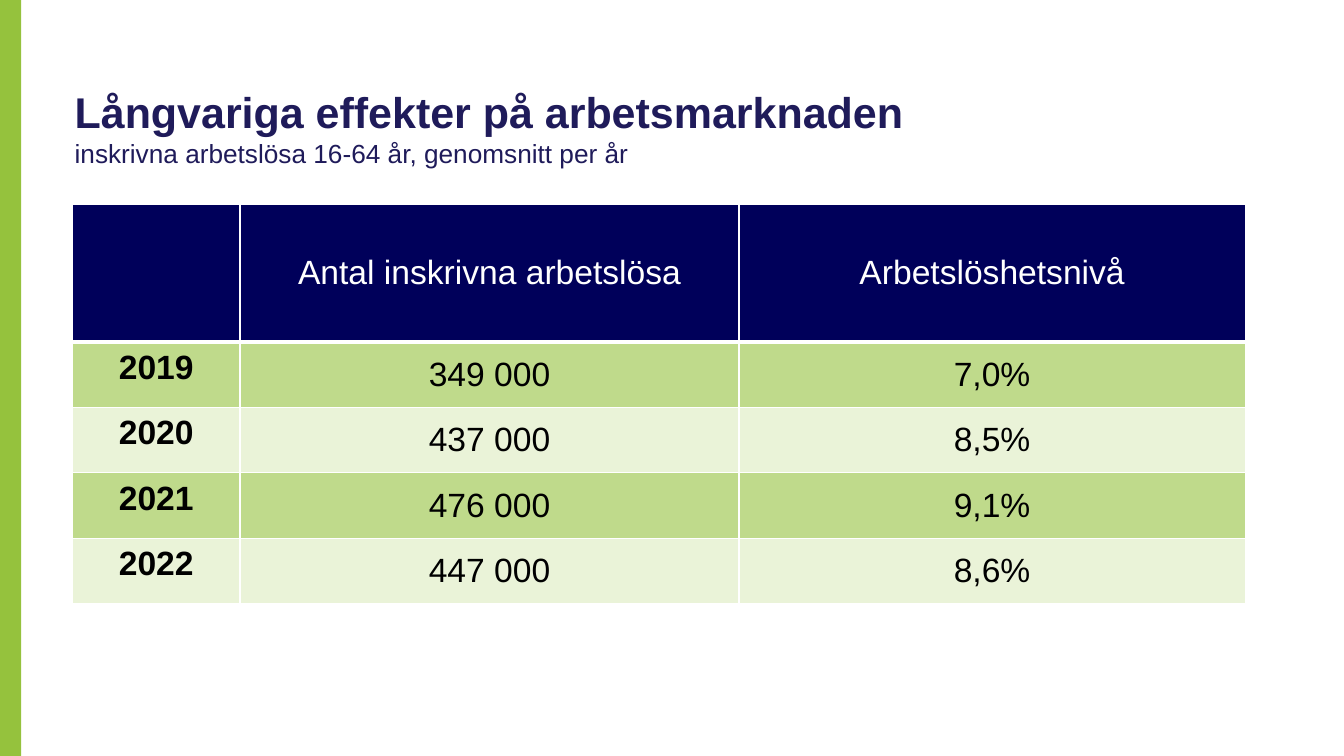
from dataclasses import dataclass

from lxml import etree
from pptx import Presentation
from pptx.dml.color import RGBColor
from pptx.enum.shapes import MSO_SHAPE
from pptx.enum.text import MSO_ANCHOR, MSO_AUTO_SIZE, PP_ALIGN
from pptx.oxml.ns import qn
from pptx.util import Inches, Pt

RECTANGLE = MSO_SHAPE.RECTANGLE
LEFT, CENTER = PP_ALIGN.LEFT, PP_ALIGN.CENTER
TOP, MIDDLE, BOTTOM = MSO_ANCHOR.TOP, MSO_ANCHOR.MIDDLE, MSO_ANCHOR.BOTTOM
NO_FIT = MSO_AUTO_SIZE.NONE
TITLE_ONLY = 5


@dataclass(frozen=True)
class Theme:
    font: str = "Arial"
    accent: str = "95C23D"
    title: str = "1F1B5A"
    header: str = "00005A"
    bands: tuple = ("BFDA8B", "EAF3D8")
    white: str = "FFFFFF"
    black: str = "000000"
    title_size: float = 30.7
    subtitle_size: float = 18.7
    table_size: float = 24


THEME = Theme()

HEADINGS = ("", "Antal inskrivna arbetslösa", "Arbetslöshetsnivå")
YEARS = (
    ("2019", "349 000", "7,0%"),
    ("2020", "437 000", "8,5%"),
    ("2021", "476 000", "9,1%"),
    ("2022", "447 000", "8,6%"),
)
COLUMN_WIDTHS = (1.66, 4.95, 5.02)
HEADER_HEIGHT = 1.36


def color(value):
    return RGBColor.from_string(value)


def style_font(font, size, value, bold=False):
    font.name = THEME.font
    font.size = Pt(size)
    font.bold = bold
    font.color.rgb = color(value)


def add_side_bar(page, left, top, width, height):
    bar = page.shapes.add_shape(
        RECTANGLE, Inches(left), Inches(top), Inches(width), Inches(height)
    )
    bar.shadow.inherit = False
    bar.fill.solid()
    bar.fill.fore_color.rgb = color(THEME.accent)
    bar.line.fill.background()


def place_title(page, left, top, width, height):
    box = page.shapes.title
    box.left, box.top = Inches(left), Inches(top)
    box.width, box.height = Inches(width), Inches(height)
    frame = box.text_frame
    frame.word_wrap = True
    frame.auto_size = NO_FIT
    frame.vertical_anchor = BOTTOM
    frame.margin_left = frame.margin_right = 0
    frame.margin_top = frame.margin_bottom = 0
    para = frame.paragraphs[0]
    para.alignment = LEFT
    style_font(para.font, THEME.title_size, THEME.title, True)
    heading = para.add_run()
    heading.text = "Långvariga effekter på arbetsmarknaden"
    style_font(heading.font, THEME.title_size, THEME.title, True)
    para.add_line_break()
    subtitle = para.add_run()
    subtitle.text = "inskrivna arbetslösa 16-64 år, genomsnitt per år"
    style_font(subtitle.font, THEME.subtitle_size, THEME.title)


def set_borders(cell, bottom_width):
    properties = cell._tc.get_or_add_tcPr()
    widths = {"a:lnL": 1, "a:lnR": 1, "a:lnT": 1, "a:lnB": bottom_width}
    for position, (tag, width) in enumerate(widths.items()):
        line = etree.Element(qn(tag), w=str(Pt(width)))
        fill = etree.SubElement(line, qn("a:solidFill"))
        etree.SubElement(fill, qn("a:srgbClr"), val=THEME.white)
        properties.insert(position, line)


def fill_cell(cell, text, fill, text_color, bold, anchor, bottom_width):
    cell.margin_left = cell.margin_right = Inches(0.13)
    cell.margin_top = cell.margin_bottom = Inches(0.07)
    cell.vertical_anchor = anchor
    cell.fill.solid()
    cell.fill.fore_color.rgb = color(fill)
    set_borders(cell, bottom_width)
    cell.text = text
    para = cell.text_frame.paragraphs[0]
    para.alignment = CENTER
    style_font(para.font, THEME.table_size, text_color, bold)


def add_unemployment_table(page, left, top, width, height):
    table = page.shapes.add_table(
        len(YEARS) + 1, len(HEADINGS),
        Inches(left), Inches(top), Inches(width), Inches(height),
    ).table
    for column, share in zip(table.columns, COLUMN_WIDTHS):
        column.width = Inches(width * share / sum(COLUMN_WIDTHS))
    year_height = (height - HEADER_HEIGHT) / len(YEARS)
    for index, values in enumerate((HEADINGS, *YEARS)):
        is_header = index == 0
        table.rows[index].height = Inches(HEADER_HEIGHT if is_header else year_height)
        fill = THEME.header if is_header else THEME.bands[(index - 1) % 2]
        text_color = THEME.white if is_header else THEME.black
        for position, text in enumerate(values):
            is_year = position == 0 and not is_header
            fill_cell(
                table.cell(index, position), text, fill, text_color, is_year,
                TOP if is_year else MIDDLE, 3 if is_header else 1,
            )


def main():
    deck = Presentation()
    deck.slide_width, deck.slide_height = Inches(13.33), Inches(7.5)
    page = deck.slides.add_slide(deck.slide_layouts[TITLE_ONLY])
    add_side_bar(page, 0, 0, 0.21, 7.5)
    add_unemployment_table(page, 0.72, 2.03, 11.63, 3.96)
    place_title(page, 0.74, 0.69, 12.32, 0.98)
    deck.save("out.pptx")


if __name__ == "__main__":
    main()
